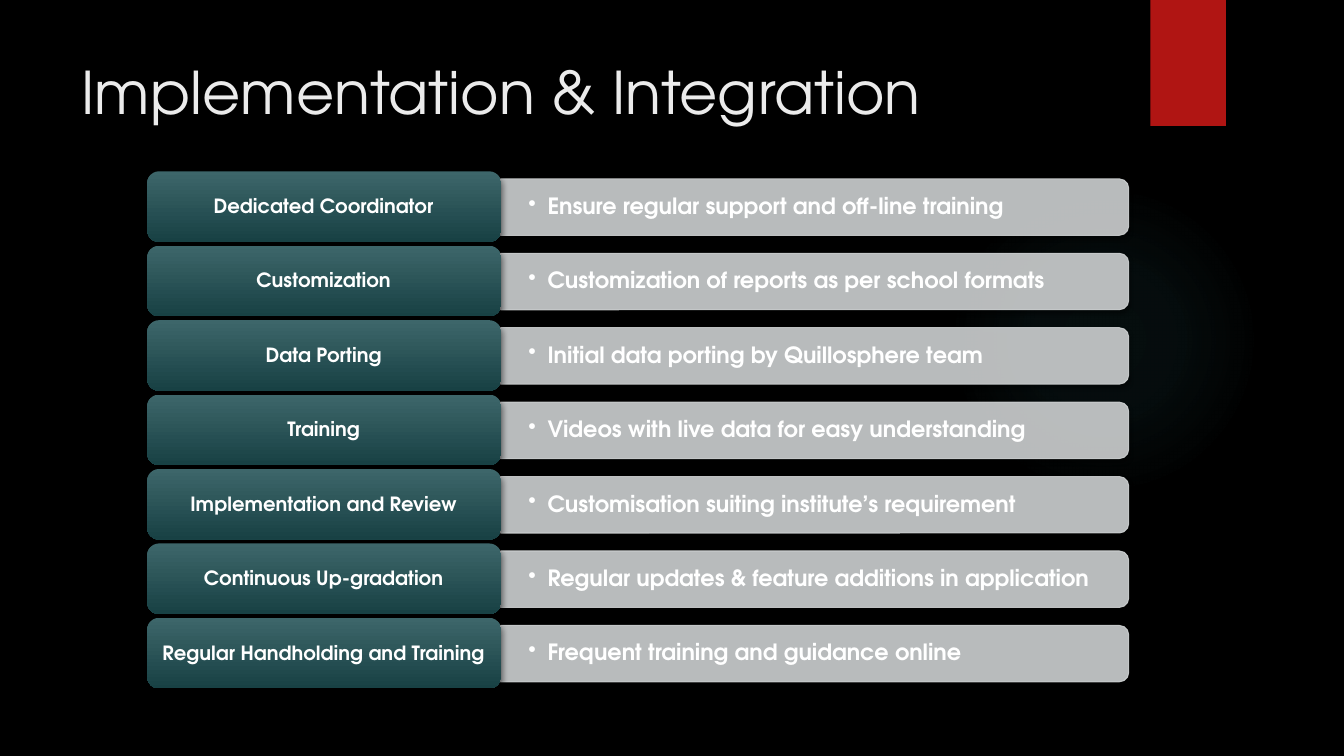
from dataclasses import dataclass

from pptx import Presentation, util as u
from pptx.dml import color
from pptx.enum import shapes, text
from pptx.oxml import parse_xml
from pptx.oxml.ns import nsdecls

FONT = "TeX Gyre Adventor"
WHITE = "FFFFFF"
SHAPE = shapes.MSO_SHAPE
ALIGN = text.PP_ALIGN
ANCHOR = text.MSO_ANCHOR

# Vertical centres of the first and last row
FIRST_ROW, LAST_ROW = 2.05, 6.48


@dataclass
class Row:
    label: str
    detail: str


@dataclass
class Box:
    left: float
    top: float
    width: float
    height: float

    def lengths(self) -> list:
        return [u.Inches(v) for v in (self.left, self.top, self.width, self.height)]


@dataclass
class Style:
    size: int
    color: str = WHITE
    bold: bool = True
    align: ALIGN = ALIGN.LEFT
    anchor: ANCHOR = ANCHOR.MIDDLE
    inset_x: float = 0.1
    inset_y: float = 0.05
    spacing: float = 1.0
    after: float = 0
    bullet: bool = False


TITLE = Style(42, "EBEBEB", bold=False, anchor=ANCHOR.TOP)
LABEL = Style(14, align=ALIGN.CENTER, inset_x=0.06, inset_y=0.03, spacing=0.9, after=4.9)
DETAIL = Style(16, inset_x=0.27, inset_y=0.14, spacing=0.9, after=2.4, bullet=True)

ROWS = [
    Row("Dedicated Coordinator", "Ensure regular support and off-line training"),
    Row("Customization", "Customization of reports as per school formats"),
    Row("Data Porting", "Initial data porting by Quillosphere team"),
    Row("Training", "Videos with live data for easy understanding"),
    Row("Implementation and Review", "Customisation suiting institute’s requirement"),
    Row("Continuous Up-gradation", "Regular updates & feature additions in application"),
    Row("Regular Handholding and Training", "Frequent training and guidance online"),
]


def rgb(value: str) -> color.RGBColor:
    return color.RGBColor.from_string(value)


def set_all(target, values: dict) -> None:
    for name, value in values.items():
        setattr(target, name, value)


def add_shape(s, kind, box: Box, fill: str = "", line: str = "", alpha: int = 100):
    sp = s.shapes.add_shape(kind, *box.lengths())
    sp.shadow.inherit = False
    if fill:
        sp.fill.solid()
        sp.fill.fore_color.rgb = rgb(fill)
    else:
        sp.fill.background()
    if line:
        sp.line.color.rgb = rgb(line)
        sp.line.width = u.Pt(0.75)
    else:
        sp.line.fill.background()
    if alpha < 100:
        for clr in sp._element.spPr.xpath(".//a:srgbClr"):
            clr.append(parse_xml(f'<a:alpha {nsdecls("a")} val="{alpha * 1000}"/>'))
    return sp


def add_gradient(sp, stops: list[tuple[int, str, int]], direction: str) -> None:
    """Swap the empty fill for a gradient of (position, colour, opacity) stops."""
    gs = "".join(
        f'<a:gs pos="{pos * 1000}"><a:srgbClr val="{clr}">'
        f'<a:alpha val="{alpha * 1000}"/></a:srgbClr></a:gs>'
        for pos, clr, alpha in stops
    )
    old = sp._element.spPr.xpath("./a:noFill")[0]
    new = parse_xml(
        f'<a:gradFill {nsdecls("a")} rotWithShape="1"><a:gsLst>{gs}</a:gsLst>{direction}</a:gradFill>'
    )
    old.getparent().replace(old, new)


def add_shadow(sp, alpha: int, blur: float, dist: float) -> None:
    effects = sp._element.spPr.xpath("./a:effectLst")[0]
    effects.append(parse_xml(
        f'<a:outerShdw {nsdecls("a")} blurRad="{u.Pt(blur)}" dist="{u.Pt(dist)}" '
        f'dir="5400000" rotWithShape="0"><a:srgbClr val="000000">'
        f'<a:alpha val="{alpha * 1000}"/></a:srgbClr></a:outerShdw>'
    ))


def add_text(s, box: Box, content: str, style: Style) -> None:
    tf = s.shapes.add_textbox(*box.lengths()).text_frame
    inset_x, inset_y = u.Inches(style.inset_x), u.Inches(style.inset_y)
    set_all(tf, {
        "word_wrap": True, "vertical_anchor": style.anchor,
        "margin_left": inset_x, "margin_right": inset_x,
        "margin_top": inset_y, "margin_bottom": inset_y,
    })
    p = tf.paragraphs[0]
    if style.bullet:
        pPr = p._p.get_or_add_pPr()
        pPr.set("marL", str(u.Inches(0.19)))
        pPr.set("indent", str(-u.Inches(0.19)))
        pPr.append(parse_xml(f'<a:buChar {nsdecls("a")} char="•"/>'))
        p.level = 1
    set_all(p, {
        "alignment": style.align, "line_spacing": style.spacing,
        "space_after": u.Pt(style.after),
    })
    r = p.add_run()
    r.text = content
    set_all(r.font, {"name": FONT, "size": u.Pt(style.size), "bold": style.bold})
    r.font.color.rgb = rgb(style.color)


def add_row(s, row: Row, middle: float) -> None:
    # Grey panel, turned so that its rounded corners face right
    panel = add_shape(s, SHAPE.ROUND_2_SAME_RECTANGLE, Box(7.8, middle - 3.11, 0.56, 6.23),
                      "CDD0D1", "CDD0D1", alpha=90)
    panel.rotation = 90
    add_shadow(panel, 45, 3, 2)
    add_text(s, Box(4.97, middle - 0.25, 6.21, 0.51), row.detail, DETAIL)

    # Teal label
    tab = add_shape(s, SHAPE.ROUNDED_RECTANGLE, Box(1.46, middle - 0.35, 3.51, 0.7))
    add_gradient(tab, [(0, "3D666A", 100), (100, "184144", 100)], '<a:lin ang="5400000" scaled="0"/>')
    add_shadow(tab, 60, 5, 3)
    add_text(s, Box(1.49, middle - 0.31, 3.44, 0.63), row.label, LABEL)


def main() -> None:
    prs = Presentation()
    set_all(prs, {"slide_width": u.Inches(13.33), "slide_height": u.Inches(7.5)})
    s = prs.slides.add_slide(prs.slide_layouts[6])
    s.background.fill.solid()
    s.background.fill.fore_color.rgb = rgb("000000")

    # Soft glow and red ribbon
    glow = add_shape(s, SHAPE.OVAL, Box(9.41, 1.83, 3.08, 3.08))
    add_gradient(glow, [(0, "50B9C1", 7), (36, "50B9C1", 6), (69, "50B9C1", 0)],
                 '<a:path path="circle"><a:fillToRect l="50000" t="50000" r="50000" b="50000"/></a:path>')
    ribbon = add_shape(s, SHAPE.RECTANGLE, Box(11.41, 0, 0.75, 1.25), "B01513")
    add_shadow(ribbon, 45, 3, 2)

    # Title and rows
    add_text(s, Box(0.71, 0.5, 10.29, 1.53), "Implementation & Integration", TITLE)
    pitch = (LAST_ROW - FIRST_ROW) / (len(ROWS) - 1)
    for i, row in enumerate(ROWS):
        add_row(s, row, FIRST_ROW + i * pitch)

    prs.save("out.pptx")


if __name__ == "__main__":
    main()
